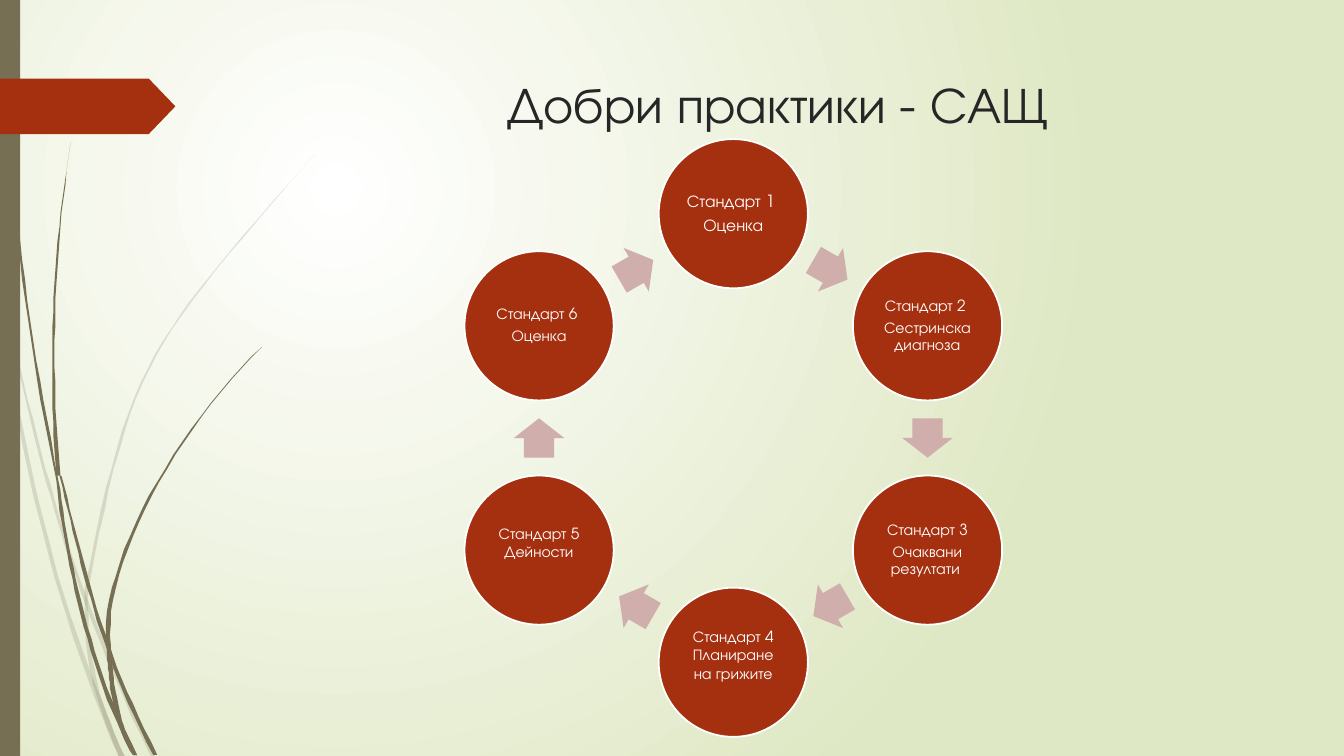
from dataclasses import dataclass
from math import cos, radians, sin

from lxml.etree import SubElement
from pptx import Presentation
from pptx.dml.color import RGBColor
from pptx.enum.shapes import MSO_SHAPE as Shape
from pptx.enum.text import MSO_ANCHOR as Anchor, PP_ALIGN as Align
from pptx.oxml.ns import qn
from pptx.util import Pt

WHITE = RGBColor(0xFF, 0xFF, 0xFF)
PALE_GREEN = RGBColor(0xDF, 0xE8, 0xC4)
OLIVE = RGBColor(0x76, 0x6F, 0x54)
RUST = RGBColor(0xA5, 0x30, 0x10)
PINK = RGBColor(0xCF, 0xAE, 0xAB)
INK = RGBColor(0x26, 0x26, 0x26)

FONT = "TeX Gyre Adventor"
WIDTH, HEIGHT = 12192000, 6858000
ROWS = 750
CELL = HEIGHT // ROWS

RING_X, RING_Y, RING_RADIUS = 727.5, 434.5, 222.5
DISC = 148
ARROW_W, ARROW_H = 39, 50
INSET, RAISED_INSET = 2, 17
STALK_STEPS = 24

Point = tuple[float, float]


@dataclass
class Standard:
    lines: tuple[str, ...]
    size: int = 11
    raised: bool = False


@dataclass
class Stalk:
    tip: Point
    upper: Point
    lower: Point
    base: Point
    tip_width: float
    base_width: float
    opacity: int = 100

    def centre(self, t: float) -> Point:
        weights = (
            (1 - t) * (2 - 3 * t) * (1 - 3 * t) / 2,
            9 * t * (1 - t) * (2 - 3 * t) / 2,
            9 * t * (1 - t) * (3 * t - 1) / 2,
            t * (3 * t - 1) * (3 * t - 2) / 2,
        )
        knots = (self.tip, self.upper, self.lower, self.base)
        x, y = (sum(w * k[axis] for w, k in zip(weights, knots)) for axis in (0, 1))
        return x, y

    def outline(self) -> list[Point]:
        left, right = [], []
        for i in range(STALK_STEPS + 1):
            t = i / STALK_STEPS
            x, y = self.centre(t)
            half = (self.tip_width + (self.base_width - self.tip_width) * t) / 2
            left.append((x - half, y))
            right.append((x + half, y))
        return left + right[::-1]


STANDARDS = [
    Standard(("Стандарт 1 ", "Оценка"), size=12),
    Standard(("Стандарт 2 ", "Сестринска диагноза")),
    Standard(("Стандарт 3", "Очаквани резултати ")),
    Standard(("Стандарт 4", "Планиране на грижите"), raised=True),
    Standard(("Стандарт 5 Дейности",), raised=True),
    Standard(("Стандарт 6 ", "Оценка")),
]

STALKS = [
    Stalk((0, 290), (24, 440), (62, 592), (121, 751), 2, 6, opacity=20),
    Stalk((14, 345), (48, 480), (88, 603), (152, 751), 2, 5, opacity=20),
    Stalk((312, 153), (190, 298), (128, 411), (86, 584), 0.5, 3.5, opacity=20),
    Stalk((86, 584), (89, 650), (102, 703), (121, 751), 3.5, 5, opacity=20),
    Stalk((3.5, 0), (11, 159), (29, 318), (57, 477), 1, 3),
    Stalk((57, 477), (71, 562), (96, 658), (134, 749), 3, 5),
    Stalk((60, 472), (82, 560), (110, 650), (154, 749), 2, 5),
    Stalk((70, 141), (57, 253), (53, 365), (58, 472), 0.5, 4),
    Stalk((260, 344), (182, 438), (125, 545), (108, 640), 0.5, 4.5),
    Stalk((108, 640), (111, 677), (119, 715), (134, 749), 4.5, 5),
]


def cells(*values: float) -> list[int]:
    return [round(v * CELL) for v in values]


def paint_background(s) -> None:
    fill = s.background.fill
    fill.gradient()
    for stop, color, position in zip(fill.gradient_stops, (WHITE, PALE_GREEN), (0, 1)):
        stop.color.rgb = color
        stop.position = position
    grad = s.background._cSld.find(".//" + qn("a:gradFill"))
    grad.remove(grad.find(qn("a:lin")))
    radial = SubElement(grad, qn("a:path"), {"path": "circle"})
    SubElement(radial, qn("a:fillToRect"), l="50000", t="50000", r="100000", b="100000")


def paint(sp, color: RGBColor) -> None:
    sp.shadow.inherit = False
    sp.fill.solid()
    sp.fill.fore_color.rgb = color
    sp.line.fill.background()


def draw_stalk(s, stalk: Stalk) -> None:
    first, *rest = stalk.outline()
    builder = s.shapes.build_freeform(*first, scale=CELL)
    builder.add_line_segments(rest, close=True)
    sp = builder.convert_to_shape()
    paint(sp, OLIVE)
    if stalk.opacity < 100:
        color = sp._element.spPr.find(qn("a:solidFill"))[0]
        SubElement(color, qn("a:alpha"), val=str(stalk.opacity * 1000))


def add_block(s, kind: Shape, x: float, y: float, w: float, h: float, color: RGBColor):
    sp = s.shapes.add_shape(kind, *cells(x, y, w, h))
    paint(sp, color)
    return sp


def add_on_ring(s, kind: Shape, angle: float, radius: float, w: float, h: float,
                color: RGBColor):
    a = radians(angle)
    x, y = RING_X + radius * sin(a), RING_Y - radius * cos(a)
    return add_block(s, kind, x - w / 2, y - h / 2, w, h, color)


def add_run(p, text: str, size: int, color: RGBColor) -> None:
    p.alignment = Align.CENTER
    r = p.add_run()
    r.text = text
    r.font.name = FONT
    r.font.size = Pt(size)
    r.font.color.rgb = color


def draw_title(s, text: str) -> None:
    sp = s.shapes.title
    sp.left, sp.top, sp.width, sp.height = cells(284, 68, 975, 140)
    sp.text_frame.vertical_anchor = Anchor.TOP
    add_run(sp.text_frame.paragraphs[0], text, 36, INK)


def draw_standard(s, standard: Standard, angle: float) -> None:
    sp = add_on_ring(s, Shape.OVAL, angle, RING_RADIUS, DISC, DISC, RUST)
    sp.line.color.rgb = WHITE
    sp.line.width = Pt(1.25)
    tf = sp.text_frame
    tf.word_wrap = True
    tf.vertical_anchor = Anchor.MIDDLE
    bottom = RAISED_INSET if standard.raised else INSET
    tf.margin_left, tf.margin_top, tf.margin_right, tf.margin_bottom = cells(
        INSET, INSET, INSET, bottom)
    for i, line in enumerate(standard.lines):
        p = tf.add_paragraph() if i else tf.paragraphs[0]
        add_run(p, line, standard.size, WHITE)
        if not standard.raised:
            p.line_spacing = 0.9
            p.space_after = Pt(4)


def draw_arrow(s, angle: float, half_step: float) -> None:
    radius = RING_RADIUS * cos(radians(half_step))
    sp = add_on_ring(s, Shape.RIGHT_ARROW, angle, radius, ARROW_W, ARROW_H, PINK)
    sp.adjustments[0], sp.adjustments[1] = 0.6, 0.5
    sp.rotation = angle


def main() -> None:
    prs = Presentation()
    prs.slide_width, prs.slide_height = WIDTH, HEIGHT
    s = prs.slides.add_slide(prs.slide_layouts[5])
    paint_background(s)
    for stalk in STALKS:
        draw_stalk(s, stalk)
    add_block(s, Shape.RECTANGLE, 0, 0, 20, ROWS, OLIVE)
    tag = add_block(s, Shape.PENTAGON, 0, 78, 174, 55, RUST)
    tag.adjustments[0] = 0.48
    draw_title(s, "Добри практики - САЩ")

    step = 360 / len(STANDARDS)
    for i, standard in enumerate(STANDARDS):
        draw_standard(s, standard, i * step)
        draw_arrow(s, (i + 0.5) * step, step / 2)

    prs.save("out.pptx")


if __name__ == "__main__":
    main()
